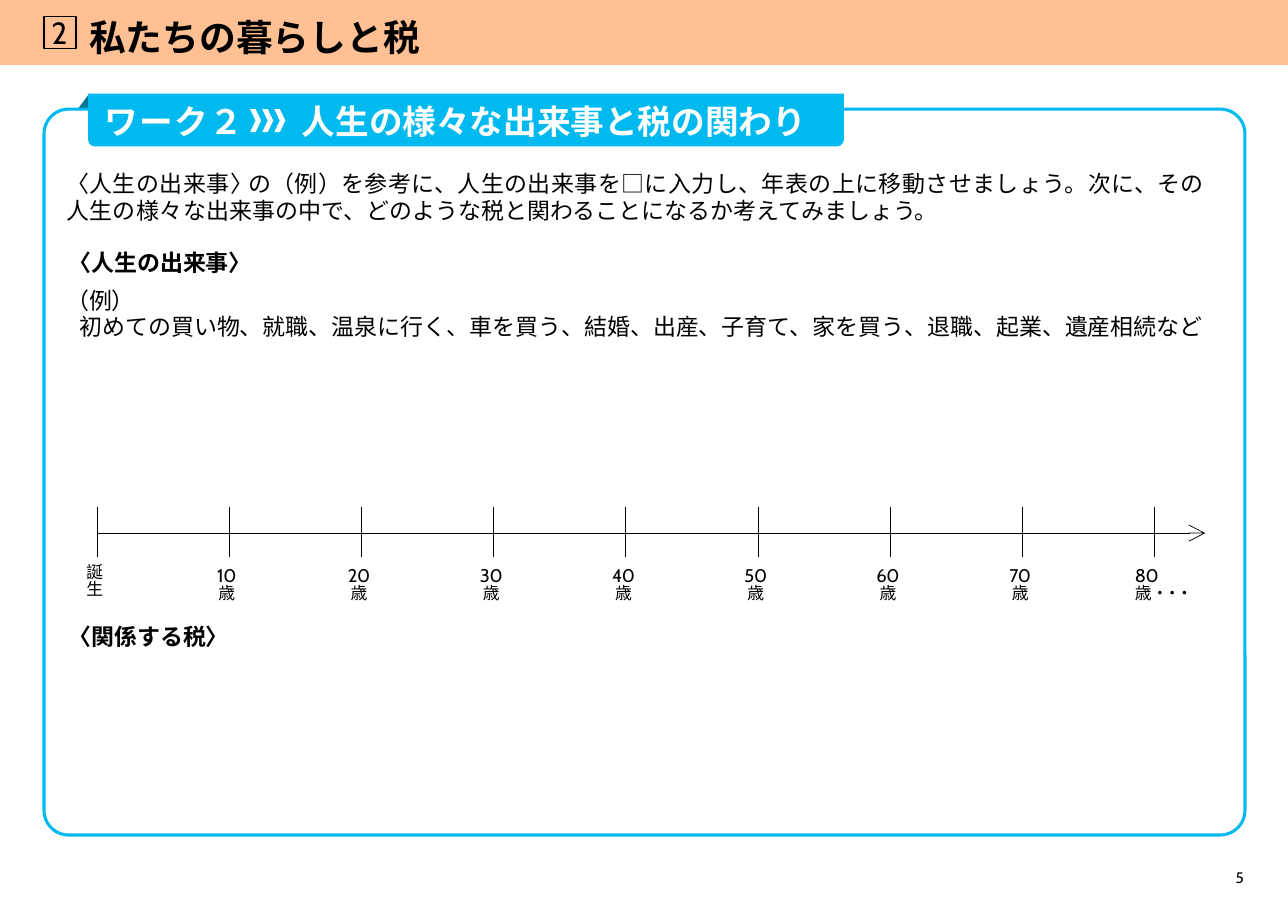
from lxml.etree import SubElement
from pptx import Presentation
from pptx.dml.color import RGBColor
from pptx.enum.shapes import MSO_CONNECTOR, MSO_SHAPE
from pptx.enum.text import MSO_ANCHOR, MSO_AUTO_SIZE, PP_ALIGN
from pptx.oxml.ns import qn
from pptx.util import Inches, Pt

CABIN = "Cabin"
GOTHIC = "Noto Sans CJK JP"
BLACK = "000000"
WHITE = "FFFFFF"
CYAN = "00B9EF"
TIGHT = 0.84


def color(value):
    """Turn a hex string into a colour."""
    return RGBColor.from_string(value)


def add_block(slide, kind, box, fill=None, line=None, width=1, adjustment=None):
    """Add a flat preset shape."""
    shape = slide.shapes.add_shape(kind, *map(Inches, box))
    shape.shadow.inherit = False
    if fill:
        shape.fill.solid()
        shape.fill.fore_color.rgb = color(fill)
    else:
        shape.fill.background()
    if line:
        shape.line.color.rgb = color(line)
        shape.line.width = Pt(width)
    else:
        shape.line.fill.background()
    if adjustment is not None:
        shape.adjustments[0] = adjustment
    return shape


def add_line(slide, start, end):
    """Add a thin black line without a shadow."""
    line = slide.shapes.add_connector(
        MSO_CONNECTOR.STRAIGHT, *map(Inches, (*start, *end)))
    line.line.color.rgb = color(BLACK)
    line.line.width = Pt(0.5)
    SubElement(line.element.spPr, qn("a:effectLst"))
    return line


def prepare_frame(shape):
    """Clear the insets of a text frame and anchor it at the top."""
    frame = shape.text_frame
    frame.margin_left = frame.margin_right = 0
    frame.margin_top = frame.margin_bottom = 0
    frame.word_wrap = True
    frame.auto_size = MSO_AUTO_SIZE.NONE
    frame.vertical_anchor = MSO_ANCHOR.TOP
    return frame


def add_run(paragraph, text, size, font=GOTHIC, fill=BLACK, bold=False, spacing=0):
    """Add one formatted run, with letter spacing in points."""
    run = paragraph.add_run()
    run.text = text
    run.font.size = Pt(size)
    run.font.bold = bold
    run.font.color.rgb = color(fill)
    run.font.name = font
    properties = run.font._element
    SubElement(properties, qn("a:ea"), typeface=font)
    if spacing:
        properties.set("spc", str(round(spacing * 100)))


def add_break(paragraph, size):
    """Break the line at the given text size."""
    paragraph.add_line_break()
    line_break = paragraph._p.findall(qn("a:br"))[-1]
    SubElement(line_break, qn("a:rPr"), sz=str(size * 100))


def add_text(slide, box, paragraphs, align=PP_ALIGN.LEFT, line_spacing=TIGHT, after=0):
    """Add a text box from lists of run arguments."""
    frame = prepare_frame(slide.shapes.add_textbox(*map(Inches, box)))
    for index, runs in enumerate(paragraphs):
        paragraph = frame.add_paragraph() if index else frame.paragraphs[0]
        paragraph.alignment = align
        paragraph.line_spacing = line_spacing
        paragraph.space_after = Pt(after)
        for run in runs:
            add_run(paragraph, **run)
    return frame


def add_header(slide, box):
    """Place the chapter band, its number and the title."""
    left, top, width, height = box
    band = add_block(slide, MSO_SHAPE.RECTANGLE, box, "FFC094")
    add_block(slide, MSO_SHAPE.RECTANGLE, (left + 0.4, top + 0.15, 0.29, 0.29), line=BLACK)
    title = slide.shapes.title
    title.left, title.top = Inches(left + 0.81), Inches(top + 0.13)
    title.width, title.height = Inches(width - 1.06), Inches(height - 0.25)
    paragraph = prepare_frame(title).paragraphs[0]
    paragraph.alignment = PP_ALIGN.LEFT
    add_run(paragraph, "私たちの暮らしと税", 24, CABIN, bold=True)
    band.element.addnext(title.element)
    add_text(slide, (left + 0.42, top + 0.13, 0.24, 0.34),
             [[dict(text="2", size=20, font=CABIN)]], PP_ALIGN.CENTER, 1)


def add_panel(slide, box):
    """Place the rounded frame with the ribbon fold behind it."""
    left, top, _, _ = box
    fold = add_block(slide, MSO_SHAPE.ISOSCELES_TRIANGLE,
                     (left + 0.19, top - 0.04, 0.32, 0.12), "007696")
    fold.rotation = 270
    add_block(slide, MSO_SHAPE.ROUNDED_RECTANGLE, box, WHITE, CYAN, 2, 0.034)


def add_ribbon(slide, box):
    """Place the work heading with its three chevrons."""
    left, top, width, height = box
    add_block(slide, MSO_SHAPE.RECTANGLE, (left, top, width, 0.36), CYAN)
    add_block(slide, MSO_SHAPE.ROUNDED_RECTANGLE,
              (left, top + height - 0.26, width, 0.26), CYAN, adjustment=0.24)
    for index in range(3):
        add_block(slide, MSO_SHAPE.CHEVRON,
                  (left + 1.47 + 0.11 * index, top + 0.14, 0.1, 0.21), WHITE)
    headings = [(0.15, 1.4, "ワーク２", 1), (1.94, 4.8, "人生の様々な出来事と税の関わり", 0)]
    for offset, text_width, text, spacing in headings:
        run = dict(text=text, size=22, fill=WHITE, bold=True, spacing=spacing)
        add_text(slide, (left + offset, top + 0.12, text_width, 0.29), [[run]])


def add_instructions(slide, box):
    """Place the task description and the example events."""
    left, top, width, _ = box
    first = [("〈人生の出来事", 0.3), ("〉の", -3),
             ("（例）を参考に、人生の出来事を□に入力し、年表の上に移動させましょう。次に、その", 0.3)]
    second = [("人生の様々な", 0.3),
              ("出来事の中で、どのような税と関わることになるか考えてみましょう。", 0)]
    add_text(slide, (left, top, width, 0.58),
             [[dict(text=text, size=15, spacing=spacing) for text, spacing in runs]
              for runs in (first, second)], PP_ALIGN.JUSTIFY, 0.96)
    add_subheading(slide, (left + 0.02, top + 0.74, 2, 0.25), "〈人生の出来事〉")
    events = "初めての買い物、就職、温泉に行く、車を買う、結婚、出産、子育て、家を買う、退職、起業、遺産相続など"
    frame = add_text(slide, (left, top + 1.08, width, 0.53),
                     [[dict(text=text, size=15)] for text in ("（例）", events)],
                     PP_ALIGN.JUSTIFY, after=2)
    frame.paragraphs[1]._p.get_or_add_pPr().set("marL", str(Inches(0.12)))


def add_subheading(slide, box, text):
    """Place a bold section heading."""
    add_text(slide, box, [[dict(text=text, size=15, bold=True)]])


def add_timeline(slide, box):
    """Place the life axis with a tick and a label every ten years."""
    left, top, width, height = box
    middle = top + 0.24
    axis = add_line(slide, (left, middle), (left + width, middle))
    SubElement(axis.line._get_or_add_ln(), qn("a:tailEnd"), type="arrow", w="lg", len="lg")
    for index in range(9):
        tick = left + 1.2 * index
        add_line(slide, (tick, top), (tick, top + height))
        last = index == 8
        label_left = tick - 0.18 if last else tick - 0.32
        label_top = top + (0.55 if index else 0.53)
        frame = add_text(slide, (label_left, label_top, 0.7 if last else 0.6, 0.4), [[]],
                         PP_ALIGN.LEFT if last else PP_ALIGN.CENTER, after=2)
        paragraph = frame.paragraphs[0]
        if index:
            add_run(paragraph, str(index * 10), 12, CABIN, spacing=-0.2)
        else:
            add_run(paragraph, "誕", 11, spacing=-0.2)
        add_break(paragraph, 11)
        add_run(paragraph, "歳" if index else "生", 11, spacing=-1.5 if last else -0.2)
        if last:
            add_run(paragraph, "・・・", 11, spacing=-3)


def main():
    """Build the worksheet slide."""
    presentation = Presentation()
    presentation.slide_width = Inches(11.69)
    presentation.slide_height = Inches(8.27)
    slide = presentation.slides.add_slide(presentation.slide_layouts[5])
    add_header(slide, (0, 0, 11.69, 0.59))
    add_panel(slide, (0.4, 0.99, 10.9, 6.59))
    add_ribbon(slide, (0.8, 0.85, 6.86, 0.48))
    add_instructions(slide, (0.6, 1.56, 10.59, 1.61))
    add_timeline(slide, (0.88, 4.6, 10.06, 0.46))
    add_subheading(slide, (0.62, 5.69, 2, 0.25), "〈関係する税〉")
    add_text(slide, (11.14, 7.88, 0.15, 0.17),
             [[dict(text="5", size=10, font=CABIN)]], PP_ALIGN.RIGHT, 1)
    presentation.save("out.pptx")


if __name__ == "__main__":
    main()
